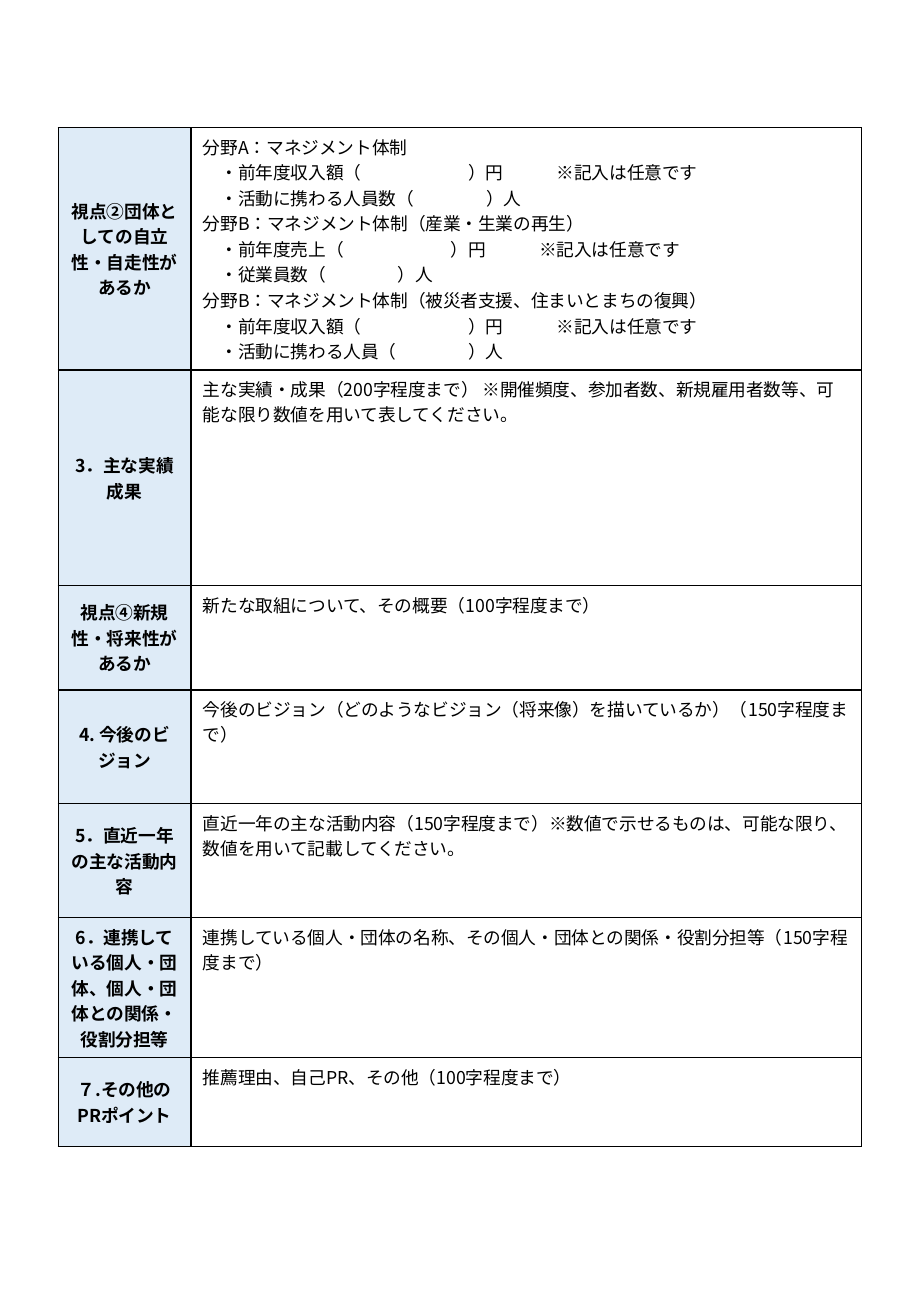
from lxml.etree import SubElement
from pptx import Presentation
from pptx.dml.color import RGBColor
from pptx.enum.lang import MSO_LANGUAGE_ID
from pptx.enum.text import MSO_ANCHOR, PP_ALIGN
from pptx.oxml import parse_xml
from pptx.oxml.ns import nsdecls, qn
from pptx.util import Cm, Pt

BLACK = RGBColor(0x00, 0x00, 0x00)
PALE_BLUE = RGBColor(0xDE, 0xEB, 0xF7)
FONT = "Noto Sans CJK JP"
CHARACTER = Cm(0.37)  # width of one full-width character at 10.5 points

LEFT, TOP = Cm(1.22), Cm(2.67)
COLUMN_WIDTHS = (2.77, 14.02)

INCOME_NOTE = "※記入は任意です"
# A string is a plain line; a tuple is (label, blank characters, unit, note).
MANAGEMENT_LINES = (
    "分野A：マネジメント体制",
    ("・前年度収入額（", 6, "）円", INCOME_NOTE),
    ("・活動に携わる人員数（", 4, "）人", ""),
    "分野B：マネジメント体制（産業・生業の再生）",
    ("・前年度売上（", 6, "）円", INCOME_NOTE),
    ("・従業員数（", 4, "）人", ""),
    "分野B：マネジメント体制（被災者支援、住まいとまちの復興）",
    ("・前年度収入額（", 6, "）円", INCOME_NOTE),
    ("・活動に携わる人員（", 4, "）人", ""),
)
# Row height in centimetres, heading, lines of the answer cell
ROWS = (
    (5.06, "視点②団体としての自立性・自走性があるか", MANAGEMENT_LINES),
    (4.51, "3．主な実績成果",
     ("主な実績・成果（200字程度まで） ※開催頻度、参加者数、新規雇用者数等、"
      "可能な限り数値を用いて表してください。",)),
    (2.18, "視点➃新規性・将来性があるか",
     ("新たな取組について、その概要（100字程度まで）",)),
    (2.38, "4. 今後のビジョン",
     ("今後のビジョン（どのようなビジョン（将来像）を描いているか）（150字程度まで）",)),
    (2.38, "5．直近一年の主な活動内容",
     ("直近一年の主な活動内容（150字程度まで）※数値で示せるものは、可能な限り、"
      "数値を用いて記載してください。",)),
    (2.92, "6．連携している個人・団体、個人・団体との関係・役割分担等",
     ("連携している個人・団体の名称、その個人・団体との関係・役割分担等（150字程度まで）",)),
    (1.86, "７.その他のPRポイント",
     ("推薦理由、自己PR、その他（100字程度まで）",)),
)


def add_span(para, text, bold=False):
    span = para.add_run()
    span.text = text
    font = span.font
    font.name, font.size, font.bold = FONT, Pt(10.5), bold
    font.color.rgb = BLACK
    font.language_id = MSO_LANGUAGE_ID.JAPANESE
    properties = span._r.get_or_add_rPr()
    SubElement(properties, qn("a:ea")).set("typeface", FONT)


def set_tab_stops(para, characters):
    """Place left tab stops, counted in full-width characters."""
    tab_list = SubElement(para._p.get_or_add_pPr(), qn("a:tabLst"))
    for count in characters:
        tab = SubElement(tab_list, qn("a:tab"))
        tab.set("pos", str(count * CHARACTER))
        tab.set("algn", "l")


def add_blank_to_fill(para, label, blanks, unit, note):
    """Write an indented label, a gap to write in, its unit and a note."""
    unit_start = 1 + len(label) + blanks
    note_start = unit_start + len(unit) + 3
    set_tab_stops(para, (1, unit_start, note_start))
    add_span(para, f"\t{label}\t{unit}")
    if note:
        add_span(para, f"\t{note}")


def set_borders(cell):
    properties = cell._tc.get_or_add_tcPr()
    for index, side in enumerate(("lnL", "lnR", "lnT", "lnB")):
        properties.insert(index, parse_xml(
            f'<a:{side} {nsdecls("a")} w="{Pt(1)}"><a:solidFill>'
            f'<a:srgbClr val="{BLACK}"/></a:solidFill></a:{side}>'))


def fill_heading(cell, text):
    cell.fill.solid()
    cell.fill.fore_color.rgb = PALE_BLUE
    cell.vertical_anchor = MSO_ANCHOR.MIDDLE
    para = cell.text_frame.paragraphs[0]
    para.alignment = PP_ALIGN.CENTER
    add_span(para, text, bold=True)
    set_borders(cell)


def fill_answer(cell, lines):
    cell.fill.background()
    frame = cell.text_frame
    for index, line in enumerate(lines):
        para = frame.add_paragraph() if index else frame.paragraphs[0]
        if isinstance(line, str):
            add_span(para, line)
        else:
            add_blank_to_fill(para, *line)
    set_borders(cell)


def add_form(page):
    width = Cm(sum(COLUMN_WIDTHS))
    height = Cm(sum(row[0] for row in ROWS))
    form = page.shapes.add_table(
        len(ROWS), len(COLUMN_WIDTHS), LEFT, TOP, width, height).table
    form.first_row = form.horz_banding = False
    for column, column_width in zip(form.columns, COLUMN_WIDTHS):
        column.width = Cm(column_width)
    for index, (row_height, heading, lines) in enumerate(ROWS):
        form.rows[index].height = Cm(row_height)
        fill_heading(form.cell(index, 0), heading)
        fill_answer(form.cell(index, 1), lines)


def main():
    deck = Presentation()
    deck.slide_width, deck.slide_height = Cm(19.05), Cm(27.51)
    page = deck.slides.add_slide(deck.slide_layouts[6])
    add_form(page)
    deck.save("out.pptx")


if __name__ == "__main__":
    main()
